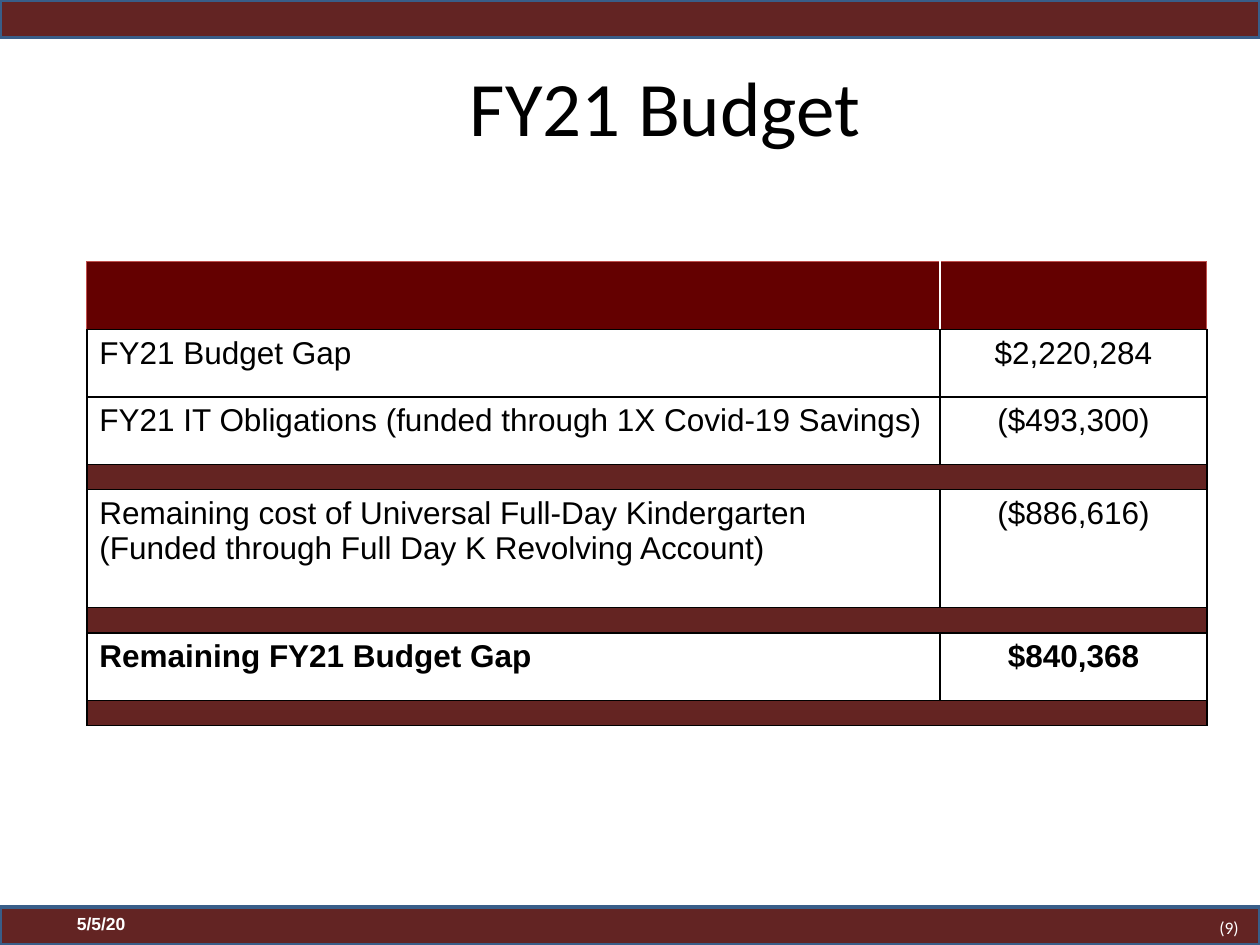
import pptx
import pptx.dml.color
import pptx.enum.shapes
import pptx.enum.text
import pptx.oxml.ns
import pptx.util
from lxml import etree

Cm = pptx.util.Cm
Pt = pptx.util.Pt
ALIGN = pptx.enum.text.PP_ALIGN
ANCHOR = pptx.enum.text.MSO_ANCHOR
qn = pptx.oxml.ns.qn

MAROON, HEADER, BAND = "632423", "640000", "642422"
BLACK, WHITE, RED, BLUE = "000000", "FFFFFF", "C0504D", "395E89"
WIDTH, HEIGHT, BAR = 25.4, 19.05, 0.76
ROW, THIN_ROW, TALL_ROW = 1.36, 0.51, 2.38

# Each row: height, fill, texts (None for a row without text), bold
ROWS = [
    (ROW, HEADER, None, False),
    (ROW, WHITE, ("FY21 Budget Gap", "$2,220,284"), False),
    (ROW, WHITE, ("FY21 IT Obligations (funded through 1X Covid-19 Savings)",
                  "($493,300)"), False),
    (THIN_ROW, BAND, None, False),
    (TALL_ROW, WHITE, ("Remaining cost of Universal Full-Day Kindergarten\n"
                       "(Funded through Full Day K Revolving Account)",
                       "($886,616)"), False),
    (THIN_ROW, BAND, None, False),
    (ROW, WHITE, ("Remaining FY21 Budget Gap", "$840,368"), True),
    (THIN_ROW, BAND, None, False),
]


def color(value):
    return pptx.dml.color.RGBColor.from_string(value)


def write(frame, text, size=18, font="Arial", ink=BLACK, bold=False,
          align=ALIGN.LEFT):
    """Fill a text frame, one paragraph per line."""
    for index, line in enumerate(text.split("\n")):
        para = frame.paragraphs[0] if index == 0 else frame.add_paragraph()
        para.alignment = align
        span = para.add_run()
        span.text = line
        span.font.size = Pt(size)
        span.font.name = font
        span.font.bold = bold
        span.font.color.rgb = color(ink)


def set_borders(cell, **sides):
    """Draw borders given as L, R, T, B = (colour, points)."""
    properties = cell._tc.get_or_add_tcPr()
    for side in "LRTB":
        if side in sides:
            ink, points = sides[side]
            line = etree.SubElement(properties, qn("a:ln" + side), w=str(Pt(points)))
            fill = etree.SubElement(line, qn("a:solidFill"))
            etree.SubElement(fill, qn("a:srgbClr"), val=ink)


def add_bar(page, left, top, width, height):
    bar = page.shapes.add_shape(pptx.enum.shapes.MSO_SHAPE.RECTANGLE,
                                Cm(left), Cm(top), Cm(width), Cm(height))
    bar.shadow.inherit = False
    bar.fill.solid()
    bar.fill.fore_color.rgb = color(MAROON)
    bar.line.color.rgb = color(BLUE)
    bar.line.width = Pt(2)


def add_label(page, text, left, top, width, height, inset, **style):
    box = page.shapes.add_textbox(Cm(left), Cm(top), Cm(width), Cm(height))
    frame = box.text_frame
    frame.word_wrap = True
    frame.margin_top = frame.margin_bottom = Cm(inset)
    write(frame, text, size=10, ink=WHITE, **style)


def add_footer(page, left, top, width, height):
    add_bar(page, left, top, width, height)
    add_label(page, "(9)", left + width - 1.07, top - 0.02, 1.27, 0.81, 0.25,
              font="Calibri")
    add_label(page, "5/5/20", left + 1.3, top - 0.02, 5.92, 1.02, 0.13, bold=True)


def add_title(page, left, top, width, height):
    title = page.shapes.title
    title.left, title.top = Cm(left), Cm(top)
    title.width, title.height = Cm(width), Cm(height)
    frame = title.text_frame
    frame.vertical_anchor = ANCHOR.TOP
    write(frame, "FY21 Budget", size=44, font="Calibri", align=ALIGN.CENTER)


def add_budget_table(page, left, top, width, height):
    table = page.shapes.add_table(len(ROWS), 2, Cm(left), Cm(top),
                                  Cm(width), Cm(height)).table
    table.first_row = table.horz_banding = False
    amount_width = 5.38
    table.columns[0].width = Cm(width - amount_width)
    table.columns[1].width = Cm(amount_width)
    black, red = (BLACK, 1), (RED, 0.75)

    for number, (row_height, fill, texts, bold) in enumerate(ROWS):
        table.rows[number].height = Cm(row_height)
        cells = [table.cell(number, column) for column in range(2)]
        if fill == BAND:
            cells[0].merge(cells[1])
        for column, cell in enumerate(cells):
            if fill == HEADER:
                outer = "L" if column == 0 else "R"
                set_borders(cell, T=red, B=black, **{outer: red})
            else:
                set_borders(cell, L=black, R=black, T=black, B=black)
            cell.fill.solid()
            cell.fill.fore_color.rgb = color(fill)
            if texts:
                write(cell.text_frame, texts[column], bold=bold,
                      align=ALIGN.CENTER if column else ALIGN.LEFT)
            else:
                # Small empty text lets the row stay thin
                cell.margin_top = cell.margin_bottom = 0
                para = cell.text_frame.paragraphs[0]
                etree.SubElement(para._p, qn("a:endParaRPr"), sz="600")


def main():
    deck = pptx.Presentation()
    deck.slide_width, deck.slide_height = Cm(WIDTH), Cm(HEIGHT)
    page = deck.slides.add_slide(deck.slide_layouts[5])
    add_bar(page, 0, 0, WIDTH, BAR)
    add_footer(page, 0, HEIGHT - BAR, WIDTH, BAR)
    add_title(page, 1.98, 1.07, 22.86, 3.18)
    add_budget_table(page, 1.75, 5.28, 22.58, sum(row[0] for row in ROWS))
    deck.save("out.pptx")


if __name__ == "__main__":
    main()
